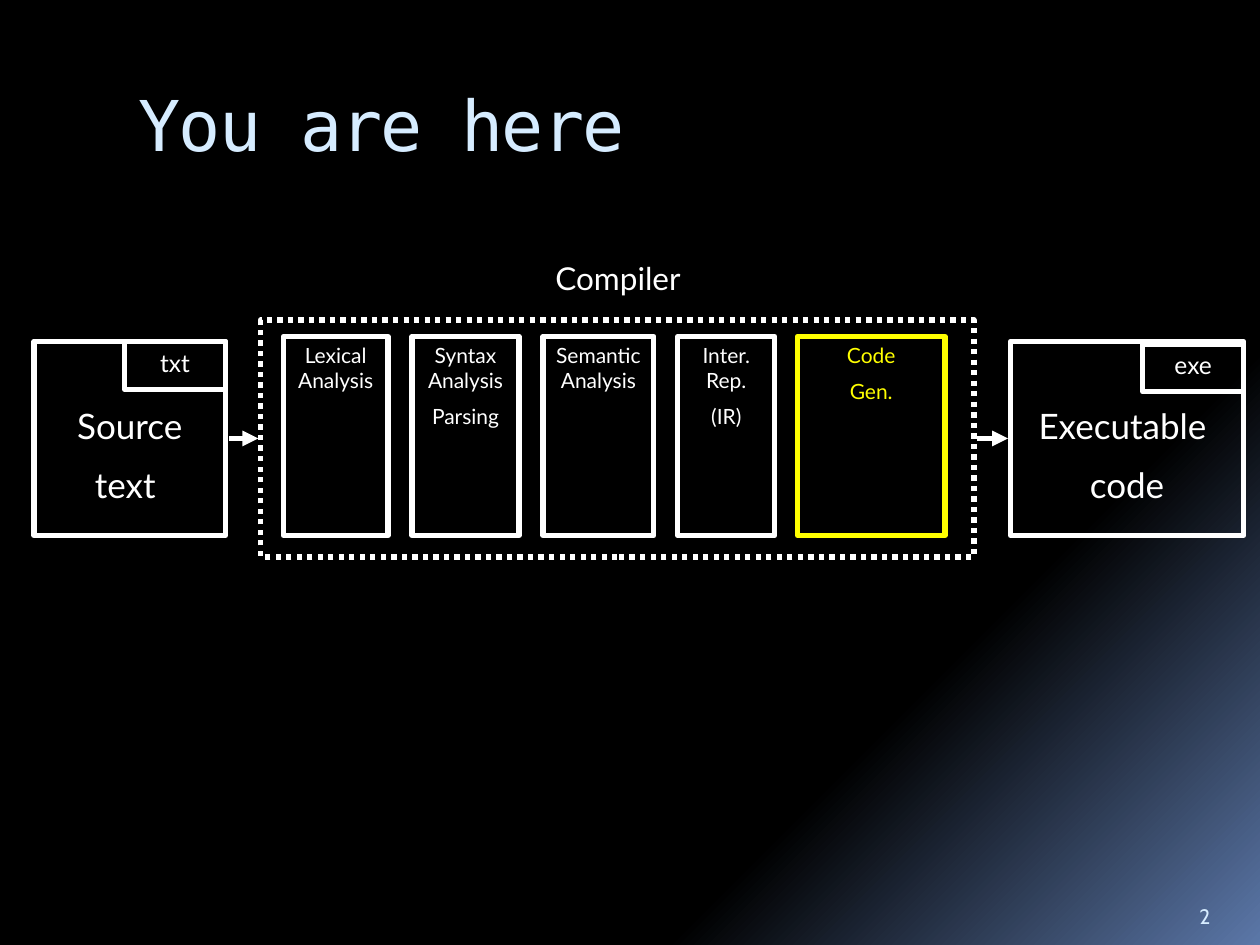
from lxml.etree import SubElement
from pptx import Presentation
from pptx.dml.color import RGBColor
from pptx.enum.dml import MSO_LINE
from pptx.enum.shapes import MSO_CONNECTOR, MSO_SHAPE
from pptx.enum.text import MSO_ANCHOR, PP_ALIGN
from pptx.oxml.ns import qn
from pptx.util import Inches, Pt

BLACK = RGBColor(0x00, 0x00, 0x00)
WHITE = RGBColor(0xFF, 0xFF, 0xFF)
YELLOW = RGBColor(0xFF, 0xFF, 0x00)
PALE_BLUE = RGBColor(0xD6, 0xEC, 0xFF)
STEEL_BLUE = RGBColor(0x5B, 0x77, 0xA8)


def write(shape, lines, size, color=WHITE, font="Lato", align=PP_ALIGN.CENTER,
          anchor=MSO_ANCHOR.TOP, top_margin=0.05):
    """Fill a shape with paragraphs set half a line apart; \\v breaks a line."""
    frame = shape.text_frame
    frame.text = "\n".join(lines)
    frame_format = {"word_wrap": True, "vertical_anchor": anchor,
                    "margin_top": Inches(top_margin)}
    for name, value in frame_format.items():
        setattr(frame, name, value)
    for paragraph in frame.paragraphs:
        paragraph.alignment = align
        paragraph.space_before = Pt(size / 2)
        for run in paragraph.runs:
            for name, value in {"name": font, "size": Pt(size)}.items():
                setattr(run.font, name, value)
            run.font.color.rgb = color


def add_box(left, top, width, height, color=WHITE):
    box = slide.shapes.add_shape(MSO_SHAPE.RECTANGLE, Inches(left), Inches(top),
                                 Inches(width), Inches(height))
    box.shadow.inherit = False
    box.fill.background()
    box.line.color.rgb = color
    box.line.width = Pt(3)
    return box


presentation = Presentation()
presentation.slide_width = Inches(10)
presentation.slide_height = Inches(7.5)
slide = presentation.slides.add_slide(presentation.slide_layouts[5])

background = slide.background.fill
background.gradient()
background.gradient_angle = 315
for stop, position, color in zip(background.gradient_stops, (0.73, 1), (BLACK, STEEL_BLUE)):
    stop.position = position
    stop.color.rgb = color

title = slide.shapes.title
title_place = {"left": 1, "top": 0.56, "width": 8.5, "height": 1}
for name, value in title_place.items():
    setattr(title, name, Inches(value))
write(title, ["You are here"], 40, PALE_BLUE, "DejaVu Sans Mono", PP_ALIGN.LEFT, top_margin=0.09)
title.text_frame.paragraphs[0].runs[0].font._element.set("spc", "-100")

slide_number = slide.shapes.add_textbox(Inches(9.42), Inches(7.02), Inches(0.5), Inches(0.4))
write(slide_number, ["2"], 12, PALE_BLUE, "Cabin", PP_ALIGN.LEFT, MSO_ANCHOR.BOTTOM)

# Input and output files, each with its extension in the top right corner
TAG_WIDTH = 0.8
files = [
    (0.27, 1.52, ["Source", "text "], "txt", 2.71),
    (8.02, 1.85, ["Executable ", "code"], "exe", 2.73),
]
for left, width, lines, extension, tag_top in files:
    write(add_box(left, 2.71, width, 1.54), lines, 20, top_margin=0.5)
    tag = add_box(left + width - TAG_WIDTH, tag_top, TAG_WIDTH, 0.38)
    write(tag, [extension], 14)

for start, end in [(1.82, 2.05), (7.75, 8)]:
    arrow = slide.shapes.add_connector(MSO_CONNECTOR.STRAIGHT, Inches(start), Inches(3.48),
                                       Inches(end), Inches(3.48))
    arrow.line.color.rgb = WHITE
    arrow.line.width = Pt(3)
    SubElement(arrow.line._get_or_add_ln(), qn("a:tailEnd"), type="triangle")
    SubElement(arrow._element.spPr, qn("a:effectLst"))

compiler_label = slide.shapes.add_textbox(Inches(3.75), Inches(2.01), Inches(2.31), Inches(0.5))
write(compiler_label, ["Compiler"], 18)
compiler = add_box(2.07, 2.54, 5.66, 1.88)
compiler.line.dash_style = MSO_LINE.ROUND_DOT

phases = [
    (2.25, 0.83, ["Lexical\vAnalysis"], WHITE),
    (3.27, 0.85, ["Syntax Analysis", "Parsing"], WHITE),
    (4.31, 0.88, ["Semantic\vAnalysis"], WHITE),
    (5.38, 0.77, ["Inter.\vRep.", "(IR)"], WHITE),
    (6.33, 1.17, ["Code", "Gen."], YELLOW),
]
for left, width, lines, color in phases:
    write(add_box(left, 2.67, width, 1.58, color), lines, 12, color)

presentation.save("out.pptx")
